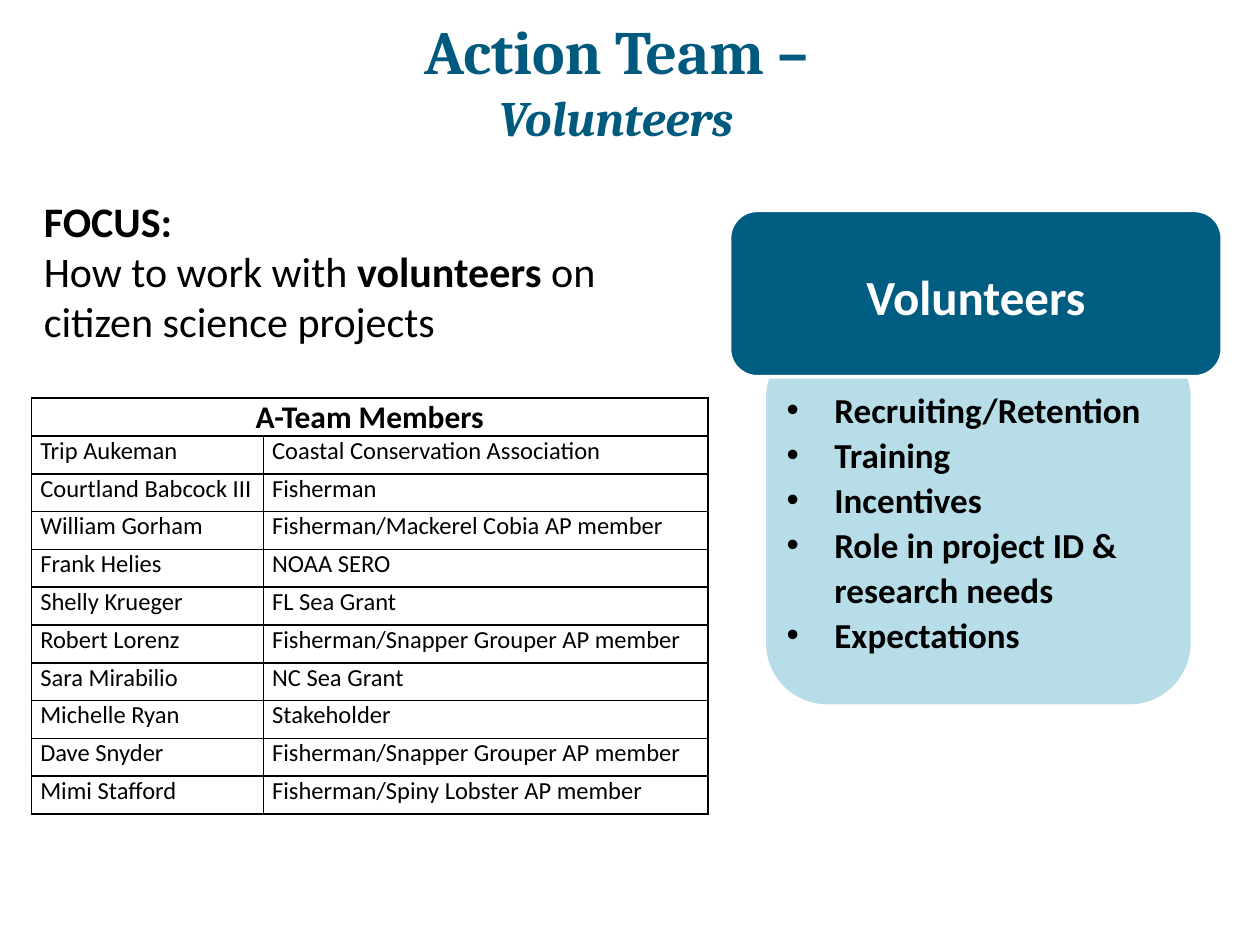
from lxml import etree
from pptx import Presentation
from pptx.dml.color import RGBColor
from pptx.enum.shapes import MSO_SHAPE
from pptx.enum.text import MSO_ANCHOR, PP_ALIGN
from pptx.oxml.ns import qn
from pptx.util import Inches, Pt

ROUNDED = MSO_SHAPE.ROUNDED_RECTANGLE
MIDDLE, TOP = MSO_ANCHOR.MIDDLE, MSO_ANCHOR.TOP
CENTER, LEFT = PP_ALIGN.CENTER, PP_ALIGN.LEFT

# Content
TITLE = ["Action Team –", "Volunteers"]
FOCUS_HEADING = "FOCUS:"
FOCUS_RUNS = [("How to work with ", False), ("volunteers ", True),
              ("on citizen science projects", False)]
TOPIC = "Volunteers"
TASKS = ["Recruiting/Retention", "Training", "Incentives",
         "Role in project ID & research needs", "Expectations"]
MEMBERS_HEADING = "A-Team Members"
MEMBERS = [
    ("Trip Aukeman", "Coastal Conservation Association"),
    ("Courtland Babcock III", "Fisherman"),
    ("William Gorham", "Fisherman/Mackerel Cobia AP member"),
    ("Frank Helies", "NOAA SERO"),
    ("Shelly Krueger", "FL Sea Grant"),
    ("Robert Lorenz", "Fisherman/Snapper Grouper AP member"),
    ("Sara Mirabilio", "NC Sea Grant"),
    ("Michelle Ryan", "Stakeholder"),
    ("Dave Snyder", "Fisherman/Snapper Grouper AP member"),
    ("Mimi Stafford", "Fisherman/Spiny Lobster AP member"),
]
COLORS = {"title": "005A7E", "topic": "005D82", "tasks": "B7DEE8",
          "text": "000000", "white": "FFFFFF"}

# Layout in inches
WIDTH, HEIGHT = 10, 7.5
MARGIN = 0.25
MEMBER_COLUMNS = (1.84, 3.53)
ROW_HEIGHT = 0.3
MEMBERS_TOP = 3.16
TASK_INDENT = 0.38
TITLE_SHIFT = 0.22


def rgb(name):
    return RGBColor.from_string(COLORS[name])


def write(frame, text, size, color="text", font="Calibri", bold=False, italic=False,
          align=LEFT, line=None, after=None, bullet=None, right=0):
    """Add one paragraph; text is a string or a list of (words, bold) runs."""
    paragraph = frame.paragraphs[0]
    if paragraph.runs:
        paragraph = frame.add_paragraph()
    paragraph.alignment = align
    if line:
        paragraph.line_spacing = line
    if after:
        paragraph.space_after = Pt(after)
    properties = paragraph._p.get_or_add_pPr()
    if right:
        properties.set("marR", str(Inches(right)))
    if bullet:
        properties.set("marL", str(Inches(TASK_INDENT)))
        properties.set("indent", str(-Inches(TASK_INDENT)))
        etree.SubElement(properties, qn("a:buFont"), typeface="Arial")
        etree.SubElement(properties, qn("a:buChar"), char=bullet)
    for words, strong in ([(text, bold)] if isinstance(text, str) else text):
        run = paragraph.add_run()
        run.text = words
        run.font.name, run.font.size = font, Pt(size)
        run.font.bold, run.font.italic = strong, italic
        run.font.color.rgb = rgb(color)


def text_box(left, top, width, height, anchor=TOP):
    frame = slide.shapes.add_textbox(*map(Inches, (left, top, width, height))).text_frame
    frame.word_wrap = True
    frame.vertical_anchor = anchor
    return frame


def panel(left, top, width, height, fill, outline=None):
    shape = slide.shapes.add_shape(ROUNDED, *map(Inches, (left, top, width, height)))
    shape.shadow.inherit = False
    shape.fill.solid()
    shape.fill.fore_color.rgb = rgb(fill)
    if outline:
        shape.line.color.rgb = rgb(outline)
        shape.line.width = Pt(2)
    else:
        shape.line.fill.background()
    shape.text_frame.word_wrap = True
    shape.text_frame.vertical_anchor = MIDDLE
    return shape.text_frame


def format_cell(cell):
    cell.margin_left = cell.margin_right = Inches(0.07)
    cell.margin_top = cell.margin_bottom = 0
    properties = cell._tc.get_or_add_tcPr()
    for side in ("a:lnL", "a:lnR", "a:lnT", "a:lnB"):
        border = etree.SubElement(properties, qn(side), w=str(Pt(1)))
        fill = etree.SubElement(border, qn("a:solidFill"))
        etree.SubElement(fill, qn("a:srgbClr"), val=COLORS["text"])
    cell.fill.background()


presentation = Presentation()
presentation.slide_width, presentation.slide_height = Inches(WIDTH), Inches(HEIGHT)
slide = presentation.slides.add_slide(presentation.slide_layouts[6])

# Focus statement
focus = text_box(MARGIN, 1.5, 5.33, 1.67)
write(focus, FOCUS_HEADING, 24, bold=True)
write(focus, FOCUS_RUNS, 24, after=24)

# Title
title = text_box(0, -0.17, WIDTH, 1.61, MIDDLE)
title_format = dict(color="title", font="Cambria", bold=True, align=CENTER)
write(title, TITLE[0], 35.1, right=TITLE_SHIFT, **title_format)
write(title, TITLE[1], 28.3, italic=True, **title_format)

# Topic card over its task list
tasks = panel(6.08, 2.67, 3.37, 2.92, "tasks")
tasks.margin_left = tasks.margin_right = Inches(0.02)
for task in TASKS:
    write(tasks, task, 20, bold=True, line=1.07, bullet="•")
topic = panel(5.79, 1.67, 3.91, 1.32, "topic", outline="white")
write(topic, TOPIC, 28, color="white", bold=True, align=CENTER, line=1.07, after=8)

# Team members
row_count = len(MEMBERS) + 1
members = slide.shapes.add_table(
    row_count, len(MEMBER_COLUMNS), Inches(MARGIN), Inches(MEMBERS_TOP),
    Inches(sum(MEMBER_COLUMNS)), Inches(row_count * ROW_HEIGHT)).table
members.first_row = members.horz_banding = False
for column, width in zip(members.columns, MEMBER_COLUMNS):
    column.width = Inches(width)
for row in members.rows:
    row.height = Inches(ROW_HEIGHT)
    for cell in row.cells:
        format_cell(cell)
heading = members.cell(0, 0)
heading.merge(members.cell(0, 1))
write(heading.text_frame, MEMBERS_HEADING, 18, bold=True, align=CENTER)
for r, member in enumerate(MEMBERS, start=1):
    for c, entry in enumerate(member):
        write(members.cell(r, c).text_frame, entry, 14)

presentation.save("out.pptx")
